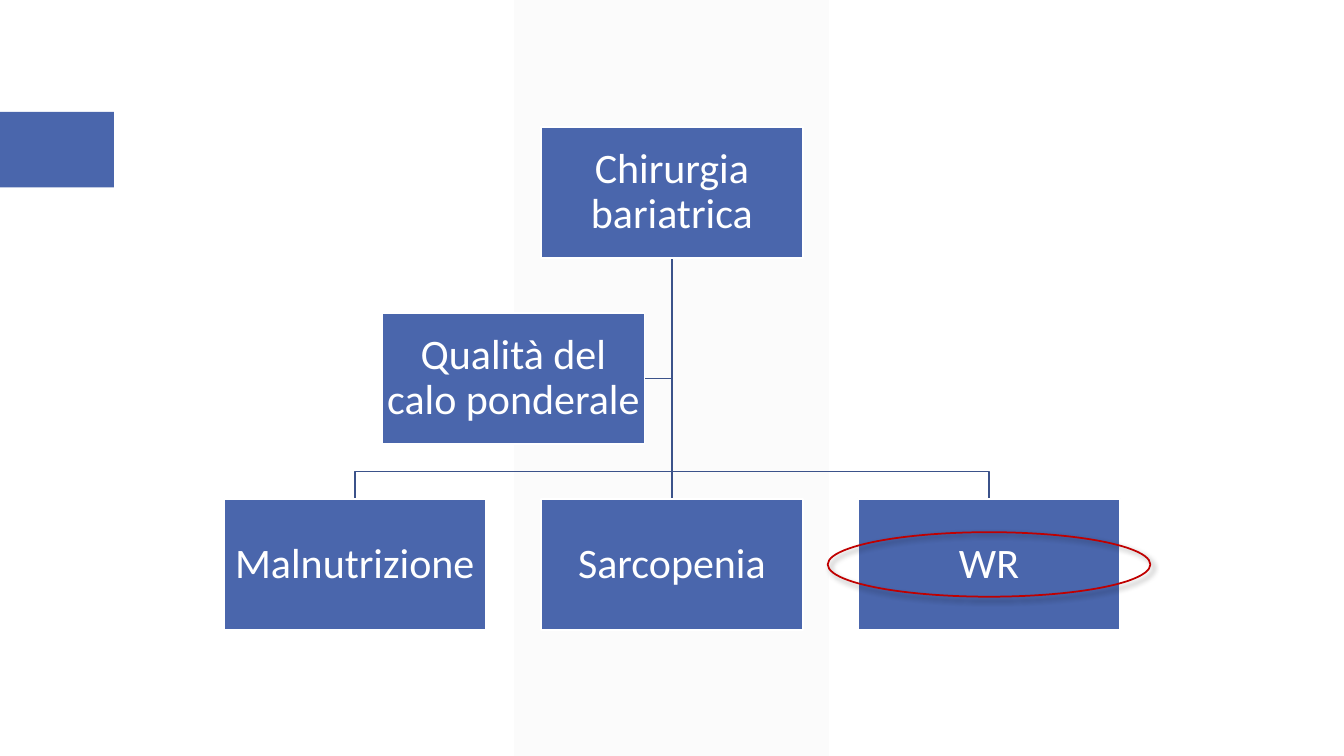
from dataclasses import dataclass

from lxml.etree import SubElement
from pptx import Presentation
from pptx.dml.color import RGBColor
from pptx.enum.shapes import MSO_SHAPE
from pptx.enum.text import MSO_ANCHOR, PP_ALIGN
from pptx.oxml.ns import qn
from pptx.util import Inches, Pt


@dataclass(frozen=True)
class Theme:
    blue: RGBColor = RGBColor(0x4A, 0x66, 0xAC)
    link: RGBColor = RGBColor(0x3B, 0x52, 0x8A)
    band: RGBColor = RGBColor(0xF2, 0xF2, 0xF2)
    white: RGBColor = RGBColor(0xFF, 0xFF, 0xFF)
    red: RGBColor = RGBColor(0xC0, 0x00, 0x00)
    font: str = "Calibri"
    size: Pt = Pt(30)
    line: Pt = Pt(1.25)


THEME = Theme()
SLIDE_W, SLIDE_H = 13.33, 7.5
BOX_W, BOX_H = 2.6, 1.3
STEP_X = 3.145  # distance between neighbouring columns
STEP_Y = 1.845  # distance between levels


def add_preset(s, kind, box, fill=None, line=None):
    sp = s.shapes.add_shape(kind, *(Inches(v) for v in box))
    sp.shadow.inherit = False
    if fill is None:
        sp.fill.background()
    else:
        sp.fill.solid()
        sp.fill.fore_color.rgb = fill
    if line is None:
        sp.line.fill.background()
    else:
        sp.line.color.rgb = line
        sp.line.width = THEME.line
    return sp


def set_alpha(color, percent):
    SubElement(color, qn("a:alpha")).set("val", str(percent * 1000))


def add_background(s):
    band = add_preset(s, MSO_SHAPE.PARALLELOGRAM, (5.1, 0, 3.12, SLIDE_H), THEME.band)
    band.adjustments[0] = 0
    set_alpha(band.fill._xPr.find(".//" + qn("a:srgbClr")), 30)
    add_preset(s, MSO_SHAPE.RECTANGLE, (0, 1.11, 1.13, 0.75), THEME.blue)


def add_link(s, *points):
    """Draw an open line through points given in inches."""
    start, *rest = [(Inches(x), Inches(y)) for x, y in points]
    builder = s.shapes.build_freeform(*start)
    builder.add_line_segments(rest, close=False)
    sp = builder.convert_to_shape()
    sp.shadow.inherit = False
    sp.fill.background()
    sp.line.color.rgb = THEME.link
    sp.line.width = THEME.line


def add_node(s, text, center_x, top):
    sp = add_preset(s, MSO_SHAPE.RECTANGLE, (center_x - BOX_W / 2, top, BOX_W, BOX_H),
                    THEME.blue, THEME.white)
    tf = sp.text_frame
    tf.word_wrap = True
    tf.vertical_anchor = MSO_ANCHOR.MIDDLE
    tf.margin_left = tf.margin_right = tf.margin_top = tf.margin_bottom = Inches(0.02)
    p = tf.paragraphs[0]
    p.text = text
    p.alignment = PP_ALIGN.CENTER
    p.line_spacing = 0.9
    p.font.name = THEME.font
    p.font.size = THEME.size
    p.font.color.rgb = THEME.white


def add_org_chart(s, center_x, top, root, assistant, children):
    """Place the root at the top, the assistant left of the stem, the children below."""
    root_bottom = top + BOX_H
    assistant_x, assistant_top = center_x - STEP_X / 2, top + STEP_Y
    child_top = top + 2 * STEP_Y
    bus_y = child_top - (STEP_Y - BOX_H) / 2
    middle = (len(children) - 1) / 2
    columns = [center_x + (i - middle) * STEP_X for i in range(len(children))]

    stem = (center_x, root_bottom)
    assistant_y = assistant_top + BOX_H / 2
    add_link(s, stem, (center_x, assistant_y), (assistant_x + BOX_W / 2, assistant_y))
    for x in columns:
        bend = [] if x == center_x else [(center_x, bus_y), (x, bus_y)]
        add_link(s, stem, *bend, (x, child_top))

    add_node(s, root, center_x, top)
    for text, x in zip(children, columns):
        add_node(s, text, x, child_top)
    add_node(s, assistant, assistant_x, assistant_top)
    return columns[-1], child_top + BOX_H / 2


def add_highlight(s, center_x, center_y, width=3.2, height=0.64):
    """Ring a point with a red ellipse that casts a soft shadow."""
    box = (center_x - width / 2, center_y - height / 2, width, height)
    sp = add_preset(s, MSO_SHAPE.OVAL, box, line=THEME.red)
    effects = sp._element.spPr.find(qn("a:effectLst"))
    shadow = SubElement(effects, qn("a:outerShdw"), blurRad=str(Pt(4)), dist=str(Pt(3)),
                        dir=str(45 * 60000), algn="tl", rotWithShape="0")
    set_alpha(SubElement(shadow, qn("a:srgbClr"), val="000000"), 40)


def main():
    prs = Presentation()
    prs.slide_width, prs.slide_height = Inches(SLIDE_W), Inches(SLIDE_H)
    s = prs.slides.add_slide(prs.slide_layouts[6])
    add_background(s)
    last_child = add_org_chart(s, SLIDE_W / 2, 1.26, "Chirurgia bariatrica",
                               "Qualità del calo ponderale",
                               ["Malnutrizione", "Sarcopenia", "WR"])
    add_highlight(s, *last_child)
    prs.save("out.pptx")


if __name__ == "__main__":
    main()
